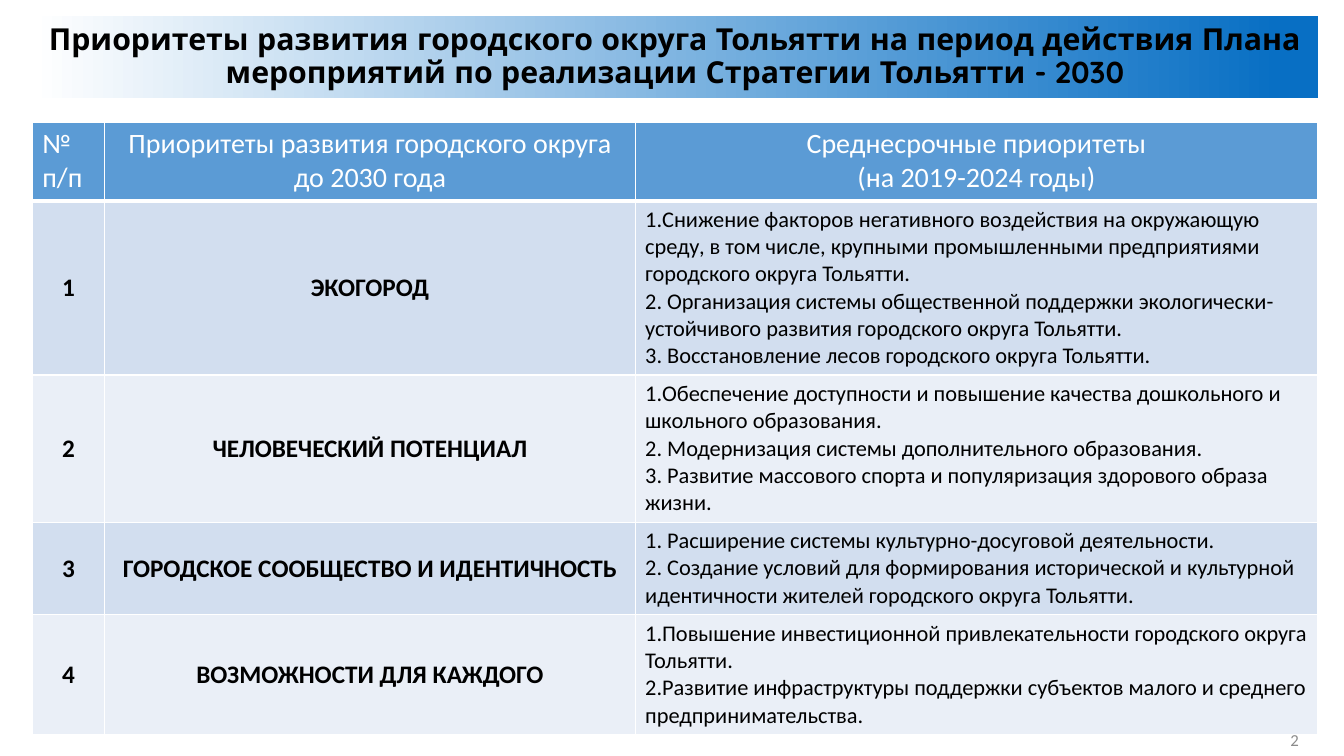
from dataclasses import dataclass

from lxml import etree
from pptx import Presentation
from pptx.dml.color import RGBColor
from pptx.enum.text import MSO_ANCHOR, MSO_AUTO_SIZE, PP_ALIGN
from pptx.oxml.ns import qn
from pptx.util import Inches, Pt

LEFT, CENTER = PP_ALIGN.LEFT, PP_ALIGN.CENTER
TOP, MIDDLE = MSO_ANCHOR.TOP, MSO_ANCHOR.MIDDLE
NO_FIT = MSO_AUTO_SIZE.NONE


@dataclass(frozen=True)
class Theme:
    """Colours, fonts and type sizes of the slide."""
    white: str = "FFFFFF"
    black: str = "000000"
    grey: str = "8C8C8C"
    title_end: str = "086FC4"
    header: str = "5B9BD5"
    bands: tuple = ("D2DEEF", "EAEFF7")
    title_font: str = "Quicksand"
    body_font: str = "Calibri"
    title_size: float = 21.6
    header_size: int = 20
    name_size: int = 18
    list_size: int = 16
    page_size: int = 12


THEME = Theme()
WIDTH, HEIGHT = 13.33, 7.5
MARGIN, CONTENT = 0.32, 12.75
COLUMNS = (0.72, 5.26, 6.77)
ROWS = (0.77, 1.72, 1.45, 0.92, 1.18)

TITLE = ("Приоритеты развития городского округа Тольятти на период действия Плана "
         "мероприятий по реализации Стратегии Тольятти - 2030")
HEADERS = (
    ["№ п/п"],
    ["Приоритеты развития городского округа до 2030 года"],
    ["Среднесрочные приоритеты", "(на 2019-2024 годы)"],
)
PRIORITIES = (
    ("ЭКОГОРОД", [
        "Снижение факторов негативного воздействия на окружающую среду, в том числе, "
        "крупными промышленными предприятиями городского округа Тольятти.",
        " Организация системы общественной поддержки экологически-устойчивого развития "
        "городского округа Тольятти.",
        " Восстановление лесов городского округа Тольятти."]),
    ("ЧЕЛОВЕЧЕСКИЙ ПОТЕНЦИАЛ", [
        "Обеспечение доступности и повышение качества дошкольного и школьного образования.",
        " Модернизация системы дополнительного образования.",
        " Развитие массового спорта и популяризация здорового образа жизни."]),
    ("ГОРОДСКОЕ СООБЩЕСТВО И ИДЕНТИЧНОСТЬ", [
        " Расширение системы культурно-досуговой деятельности.",
        " Создание условий для формирования исторической и культурной идентичности "
        "жителей городского округа Тольятти."]),
    ("ВОЗМОЖНОСТИ ДЛЯ КАЖДОГО", [
        "Повышение инвестиционной привлекательности городского округа Тольятти.",
        "Развитие инфраструктуры поддержки субъектов малого и среднего "
        "предпринимательства."]),
)


def write(tf, lines, size, color, align=CENTER, bold=False, font=THEME.body_font,
          numbered=False):
    """Fill a text frame with one paragraph per line."""
    for i, line in enumerate(lines):
        p = tf.paragraphs[0] if i == 0 else tf.add_paragraph()
        p.alignment = align
        r = p.add_run()
        r.text = line
        r.font.name, r.font.size, r.font.bold = font, Pt(size), bold
        r.font.color.rgb = RGBColor.from_string(color)
        if numbered:
            pPr = p._p.get_or_add_pPr()
            pPr.set("marL", "0")
            pPr.set("indent", "0")
            etree.SubElement(pPr, qn("a:buAutoNum"), type="arabicPeriod")


def style_cell(cell, fill, anchor, bottom=1):
    """Set the fill, anchor and white borders of a cell."""
    cell.vertical_anchor = anchor
    tcPr = cell._tc.get_or_add_tcPr()
    for side, width in (("L", 1), ("R", 1), ("T", 1), ("B", bottom)):
        ln = etree.SubElement(tcPr, qn(f"a:ln{side}"), w=str(Pt(width)))
        solid = etree.SubElement(ln, qn("a:solidFill"))
        etree.SubElement(solid, qn("a:srgbClr"), val=THEME.white)
    cell.fill.solid()
    cell.fill.fore_color.rgb = RGBColor.from_string(fill)


def add_title(s, box):
    """Place the title on its gradient band."""
    sp = s.shapes.title
    sp.left, sp.top, sp.width, sp.height = map(Inches, box)
    sp.fill.gradient()
    sp.fill.gradient_angle = 0
    stops = ((0, THEME.white), (0.97, THEME.title_end))
    for stop, (position, color) in zip(sp.fill.gradient_stops, stops):
        stop.position = position
        stop.color.rgb = RGBColor.from_string(color)
    tf = sp.text_frame
    tf.word_wrap, tf.auto_size, tf.vertical_anchor = True, NO_FIT, MIDDLE
    write(tf, [TITLE], THEME.title_size, THEME.black, bold=True, font=THEME.title_font)
    tf.paragraphs[0].line_spacing = 0.9


def add_priorities(s, box):
    """Place the table of priorities."""
    table = s.shapes.add_table(len(ROWS), len(COLUMNS), *map(Inches, box)).table
    for column, width in zip(table.columns, COLUMNS):
        column.width = Inches(width)
    for row, height in zip(table.rows, ROWS):
        row.height = Inches(height)
    for i, lines in enumerate(HEADERS):
        cell = table.cell(0, i)
        style_cell(cell, THEME.header, TOP, bottom=3)
        write(cell.text_frame, lines, THEME.header_size, THEME.white,
              CENTER if i else LEFT)
    for n, (name, goals) in enumerate(PRIORITIES, 1):
        band = THEME.bands[(n - 1) % 2]
        for i, text in enumerate((str(n), name)):
            cell = table.cell(n, i)
            style_cell(cell, band, MIDDLE)
            write(cell.text_frame, [text], THEME.name_size, THEME.black, bold=True)
        cell = table.cell(n, 2)
        style_cell(cell, band, TOP)
        write(cell.text_frame, goals, THEME.list_size, THEME.black, LEFT, numbered=True)


def add_page_number(s, box):
    """Place the page number."""
    tf = s.shapes.add_textbox(*map(Inches, box)).text_frame
    tf.word_wrap, tf.vertical_anchor = True, MIDDLE
    write(tf, ["2"], THEME.page_size, THEME.grey)


def main():
    """Build the slide and save it."""
    prs = Presentation()
    prs.slide_width, prs.slide_height = Inches(WIDTH), Inches(HEIGHT)
    s = prs.slides.add_slide(prs.slide_layouts[5])
    add_title(s, (MARGIN, 0.16, CONTENT, 0.81))
    add_priorities(s, (MARGIN, 1.21, CONTENT, sum(ROWS)))
    add_page_number(s, (MARGIN + CONTENT - 0.46, 7.17, 0.46, 0.33))
    prs.save("out.pptx")


if __name__ == "__main__":
    main()
